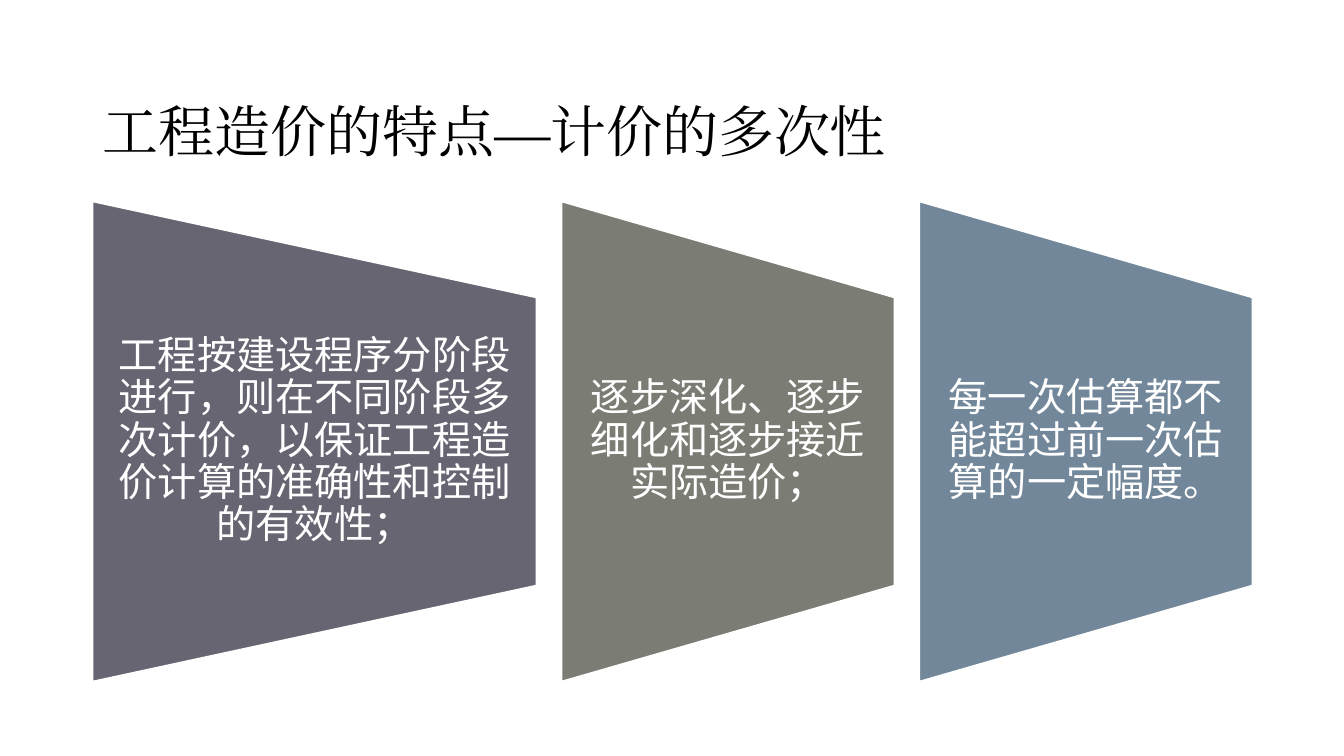
from dataclasses import dataclass

from pptx import Presentation
from pptx.dml.color import RGBColor
from pptx.enum.shapes import MSO_SHAPE
from pptx.enum.text import MSO_ANCHOR, PP_ALIGN
from pptx.oxml.ns import qn
from pptx.slide import Slide
from pptx.util import Inches, Pt

TRAPEZOID = MSO_SHAPE.FLOWCHART_MANUAL_OPERATION
MIDDLE = MSO_ANCHOR.MIDDLE
LEFT = PP_ALIGN.LEFT
CENTER = PP_ALIGN.CENTER

MARGIN = 0.92
GAP = 0.25
PANEL_HEIGHT = 4.76
TEXT_HEIGHT = 2.86
PANEL_MIDDLE = 4.38
WHITE = "FFFFFF"


@dataclass(frozen=True)
class Panel:
    statement: str
    width: float
    color: str


@dataclass(frozen=True)
class TextStyle:
    font: str
    size: float
    color: str
    align: PP_ALIGN
    line_spacing: float
    space_after: float
    side_inset: float
    top_inset: float


TITLE_STYLE = TextStyle("Times New Roman", 40, "000000", LEFT, 1.5, 0, 0.1, 0.05)
PANEL_STYLE = TextStyle("Noto Sans CJK SC", 28, WHITE, CENTER, 0.9, 9.8, 0.19, 0)

PANELS = [
    Panel("工程按建设程序分阶段进行，则在不同阶段多次计价，以保证工程造价计算的准确性和控制的有效性；", 4.4, "686573"),
    Panel("逐步深化、逐步细化和逐步接近实际造价；", 3.3, "7B7C74"),
    Panel("每一次估算都不能超过前一次估算的一定幅度。", 3.3, "728799"),
]


def rgb(value: str) -> RGBColor:
    return RGBColor.from_string(value)


def add_text(slide: Slide, text: str, left: float, top: float,
             width: float, height: float, style: TextStyle) -> None:
    box = slide.shapes.add_textbox(Inches(left), Inches(top), Inches(width), Inches(height))
    frame = box.text_frame
    frame.word_wrap = True
    frame.vertical_anchor = MIDDLE
    frame.margin_left = frame.margin_right = Inches(style.side_inset)
    frame.margin_top = frame.margin_bottom = Inches(style.top_inset)
    paragraph = frame.paragraphs[0]
    paragraph.alignment = style.align
    paragraph.line_spacing = style.line_spacing
    paragraph.space_after = Pt(style.space_after)
    run = paragraph.add_run()
    run.text = text
    run.font.size = Pt(style.size)
    run.font.color.rgb = rgb(style.color)
    run.font.name = style.font
    east_asian = run.font.fill._xPr.makeelement(qn("a:ea"), {"typeface": style.font})
    run.font.fill._xPr.append(east_asian)


def add_panel(slide: Slide, panel: Panel, left: float) -> None:
    trapezoid = slide.shapes.add_shape(
        TRAPEZOID,
        Inches(left + (panel.width - PANEL_HEIGHT) / 2),
        Inches(PANEL_MIDDLE - panel.width / 2),
        Inches(PANEL_HEIGHT),
        Inches(panel.width),
    )
    trapezoid.rotation = 270
    trapezoid.shadow.inherit = False
    trapezoid.fill.solid()
    trapezoid.fill.fore_color.rgb = rgb(panel.color)
    trapezoid.line.color.rgb = rgb(WHITE)
    trapezoid.line.width = Pt(1)
    add_text(slide, panel.statement, left, PANEL_MIDDLE - TEXT_HEIGHT / 2,
             panel.width, TEXT_HEIGHT, PANEL_STYLE)


def main() -> None:
    presentation = Presentation()
    presentation.slide_width = Inches(13.33)
    presentation.slide_height = Inches(7.5)
    slide = presentation.slides.add_slide(presentation.slide_layouts[6])

    add_text(slide, "工程造价的特点—计价的多次性", MARGIN, 0.4, 11.5, 1.45, TITLE_STYLE)
    left = MARGIN
    for panel in PANELS:
        add_panel(slide, panel, left)
        left += panel.width + GAP

    presentation.save("out.pptx")


if __name__ == "__main__":
    main()
